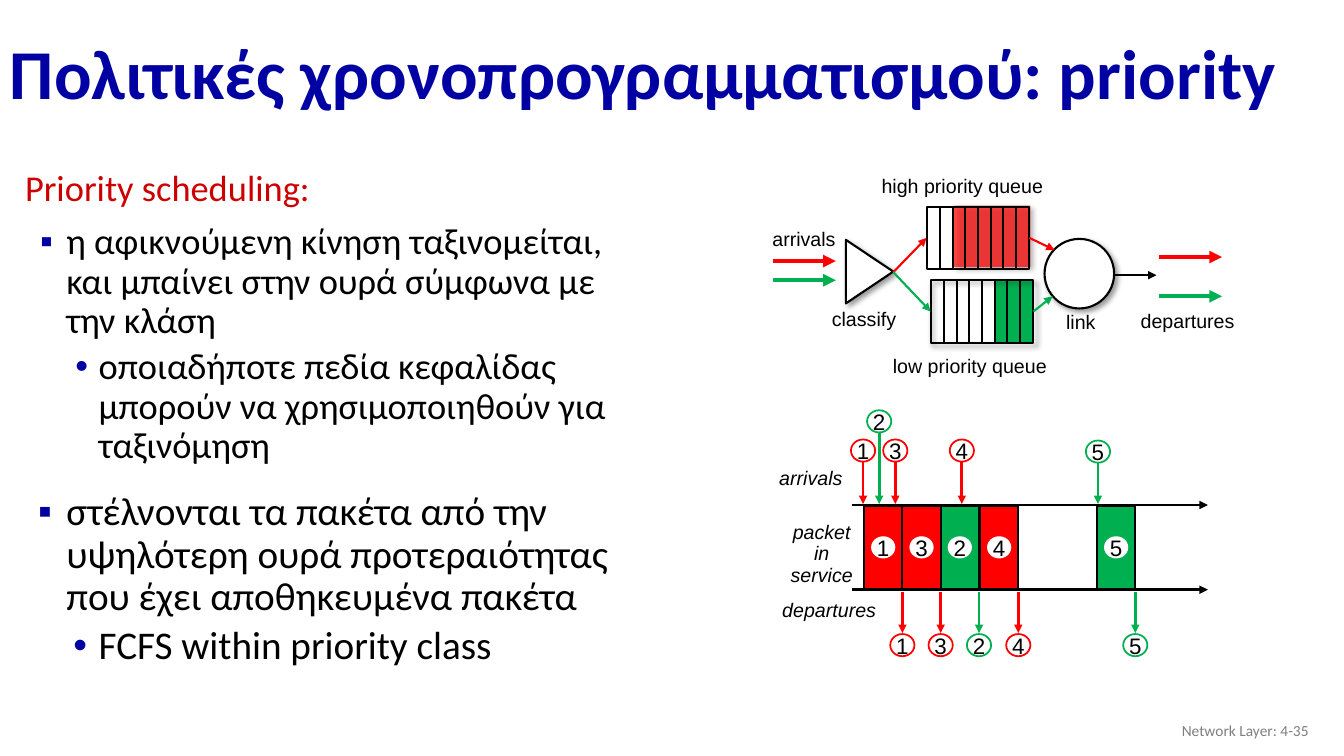
from lxml import etree
from pptx import Presentation
from pptx.dml.color import RGBColor
from pptx.enum.shapes import MSO_CONNECTOR, MSO_SHAPE
from pptx.enum.text import MSO_ANCHOR, PP_ALIGN
from pptx.oxml.ns import qn
from pptx.util import Emu, Pt

STRAIGHT = MSO_CONNECTOR.STRAIGHT
RECTANGLE = MSO_SHAPE.RECTANGLE
OVAL = MSO_SHAPE.OVAL
TRIANGLE = MSO_SHAPE.ISOSCELES_TRIANGLE
TOP = MSO_ANCHOR.TOP
MIDDLE = MSO_ANCHOR.MIDDLE
LEFT = PP_ALIGN.LEFT
CENTER = PP_ALIGN.CENTER
RIGHT = PP_ALIGN.RIGHT
LEFT_SIDE, RIGHT_SIDE = 1, 3

EMU_PER_PX = 9144
RED, GREEN, BLACK, WHITE = "FF0000", "00B050", "000000", "FFFFFF"
NAVY, HEADING, GRAY = "0000A3", "CC0000", "7F7F7F"


def px(length):
    return Emu(length * EMU_PER_PX)


def color(value):
    return RGBColor.from_string(value)


def add_element(parent, tag, **attributes):
    return etree.SubElement(parent, qn(tag), attributes)


class SlideBuilder:
    label_style = {"name": "Arial", "size": Pt(14)}
    number_style = {"name": "Arial", "size": Pt(16)}

    def __init__(self, slide):
        self.slide = slide

    def fill_paragraph(self, paragraph, text, style, ink=BLACK, **layout):
        run = paragraph.add_run()
        run.text = text
        for name, value in style.items():
            setattr(run.font, name, value)
        run.font.color.rgb = color(ink)
        for name, value in layout.items():
            setattr(paragraph, name, value)

    def frame(self, box, wrap=True, anchor=TOP):
        text_frame = self.slide.shapes.add_textbox(*map(px, box)).text_frame
        text_frame.word_wrap = wrap
        text_frame.vertical_anchor = anchor
        return text_frame

    def text(self, box, text, style, ink=BLACK, wrap=True, anchor=TOP, **layout):
        text_frame = self.frame(box, wrap, anchor)
        self.fill_paragraph(text_frame.paragraphs[0], text, style, ink, **layout)

    def label(self, box, text):
        self.text(box, text, self.label_style, wrap=False, alignment=CENTER)

    def side_label(self, box, text, **layout):
        self.text(box, text, {**self.label_style, "italic": True}, **layout)

    def outline(self, box, items, size):
        text_frame = self.frame(box)
        for index, (text, ink, bullet, margin, indent, before) in enumerate(items):
            paragraph = text_frame.add_paragraph() if index else text_frame.paragraphs[0]
            self.fill_paragraph(paragraph, text, {"name": "Calibri", "size": Pt(size)}, ink,
                                line_spacing=0.9, space_before=Pt(before))
            properties = paragraph._p.get_or_add_pPr()
            properties.set("marL", str(px(margin)))
            properties.set("indent", str(px(indent)))
            if bullet:
                add_element(add_element(properties, "a:buClr"), "a:srgbClr", val=NAVY)
                add_element(properties, "a:buFont", typeface="Arial")
                add_element(properties, "a:buChar", char=bullet)

    def shape(self, kind, box, fill=None, line=None, weight=1.5, shadow=False, opacity=None):
        shape = self.slide.shapes.add_shape(kind, *map(px, box))
        shape.shadow.inherit = False
        if fill:
            shape.fill.solid()
            shape.fill.fore_color.rgb = color(fill)
        else:
            shape.fill.background()
        if line:
            shape.line.color.rgb = color(line)
            shape.line.width = Pt(weight)
        else:
            shape.line.fill.background()
        properties = shape._element.spPr
        if opacity:
            fill_color = properties.find(qn("a:solidFill")).find(qn("a:srgbClr"))
            add_element(fill_color, "a:alpha", val=str(opacity * 1000))
        if shadow:
            outer = add_element(properties.find(qn("a:effectLst")), "a:outerShdw",
                                blurRad=str(Pt(4)), dist=str(Pt(3)), dir="2700000",
                                algn="tl", rotWithShape="0")
            add_element(add_element(outer, "a:srgbClr", val=BLACK), "a:alpha", val="40000")
        return shape

    def line(self, start, end, ink, weight, arrow=True, begin_at=None, end_at=None):
        connector = self.slide.shapes.add_connector(STRAIGHT, *map(px, (*start, *end)))
        if begin_at:
            connector.begin_connect(*begin_at)
        if end_at:
            connector.end_connect(*end_at)
        connector.line.color.rgb = color(ink)
        connector.line.width = Pt(weight)
        properties = connector._element.spPr
        if arrow:
            add_element(properties.find(qn("a:ln")), "a:tailEnd", type="triangle")
        add_element(properties, "a:effectLst")

    def number(self, left, top, text, line=None):
        shape = self.shape(OVAL, (left, top, 24, 22), WHITE, line, 1.25)
        text_frame = shape.text_frame
        margins = dict.fromkeys(("margin_left", "margin_right", "margin_top", "margin_bottom"), 0)
        for name, value in {**margins, "word_wrap": False, "vertical_anchor": MIDDLE}.items():
            setattr(text_frame, name, value)
        self.fill_paragraph(text_frame.paragraphs[0], text, self.number_style, alignment=CENTER)

    def queue(self, left, top, filled, **outline):
        width, height, slots = 102, 62, 8
        self.shape(RECTANGLE, **filled)
        box = self.shape(RECTANGLE, (left, top, width, height), line=BLACK, **outline)
        for slot in range(1, slots):
            x = left + round(width * slot / slots)
            self.line((x, top), (x, top + height), BLACK, 1.5, arrow=False)
        return box


def draw_text(builder):
    builder.outline((0, 164, 640, 293), [
        ("Priority scheduling:", HEADING, None, 39, -24, 0),
        ("η αφικνούμενη κίνηση ταξινομείται, και μπαίνει στην ουρά σύμφωνα με την κλάση",
         BLACK, "▪", 56, -26, 10),
        ("οποιαδήποτε πεδία κεφαλίδας μπορούν να χρησιμοποιηθούν για ταξινόμηση",
         BLACK, "•", 88, -23, 5)], 26)
    builder.text((0, 27, 1318, 98), "Πολιτικές χρονοπρογραμματισμού: priority",
                 {"name": "Calibri", "size": Pt(50), "bold": True}, NAVY,
                 anchor=MIDDLE, line_spacing=0.9)
    builder.outline((0, 483, 648, 215), [
        ("στέλνονται τα πακέτα από την υψηλότερη ουρά προτεραιότητας που έχει αποθηκευμένα πακέτα",
         BLACK, "▪", 56, -28, 0),
        ("FCFS within priority class", BLACK, "•", 88, -25, 5)], 28)
    builder.text((1008, 705, 300, 40), "Network Layer: 4-35",
                 {"name": "Calibri", "size": Pt(11)}, GRAY, anchor=MIDDLE, alignment=RIGHT)


def draw_queues(builder):
    low = builder.queue(923, 278, {"box": (986, 278, 38, 63), "fill": GREEN}, shadow=True)
    high = builder.queue(919, 205, {"box": (946, 204, 76, 61), "fill": RED,
                                    "opacity": 71, "shadow": True})
    classifier = builder.shape(TRIANGLE, (831, 246, 63, 47), WHITE, BLACK, shadow=True)
    classifier.rotation = 90
    builder.shape(OVAL, (1036, 237, 69, 69), WHITE, BLACK, shadow=True)
    for queue, ink, y, link_end in ((high, RED, 236, (1046, 248)), (low, GREEN, 309, (1044, 294))):
        builder.line((886, 270), (919, y), ink, 1.5, end_at=(queue, LEFT_SIDE))
        builder.line((1022, y), link_end, ink, 1.5, begin_at=(queue, RIGHT_SIDE))
    builder.line((1105, 273), (1147, 273), BLACK, 1.5)
    for left, top, ink in ((767, 259, RED), (767, 278, GREEN),
                           (1150, 255, RED), (1150, 294, GREEN)):
        builder.line((left, top), (left + 62, top), ink, 3)
    for box, text in (((864, 168, 181, 34), "high priority queue"),
                      ((875, 346, 174, 34), "low priority queue"),
                      ((756, 220, 83, 34), "arrivals"),
                      ((814, 300, 86, 34), "classify"),
                      ((1121, 302, 114, 34), "departures"),
                      ((1047, 303, 50, 34), "link")):
        builder.label(box, text)


def draw_timeline(builder):
    packet_width = 38
    packets = (("1", RED, 857), ("3", RED, 895), ("2", GREEN, 933),
               ("4", RED, 972), ("5", GREEN, 1088))
    arrivals = (("1", RED, 856, 436), ("3", RED, 888, 436), ("4", RED, 954, 436),
                ("2", GREEN, 872, 407), ("5", GREEN, 1089, 437))
    for text, ink, left in packets:
        builder.shape(RECTANGLE, (left, 502, packet_width, 83), ink, BLACK, 1.25)
        builder.number(left + 7, 532, text)
    for y in (501, 585):
        builder.line((845, y), (1198, y), BLACK, 2)
    builder.side_label((763, 457, 88, 34), "arrivals", alignment=LEFT)
    builder.side_label((766, 588, 119, 34), "departures", alignment=LEFT)
    builder.side_label((768, 513, 94, 65), "packet in service",
                       alignment=CENTER, line_spacing=0.91)
    for text, ink, x, top in arrivals:
        builder.number(x - 12, top, text, ink)
        builder.line((x, top + 22), (x, 500), ink, 2)
    for text, ink, left in packets:
        x = left + packet_width
        builder.number(x - 12, 629, text, ink)
        builder.line((x, 587), (x, 628), ink, 2)


def main():
    presentation = Presentation()
    presentation.slide_width = px(1333)
    presentation.slide_height = px(750)
    builder = SlideBuilder(presentation.slides.add_slide(presentation.slide_layouts[6]))
    draw_text(builder)
    draw_queues(builder)
    draw_timeline(builder)
    presentation.save("out.pptx")


if __name__ == "__main__":
    main()
